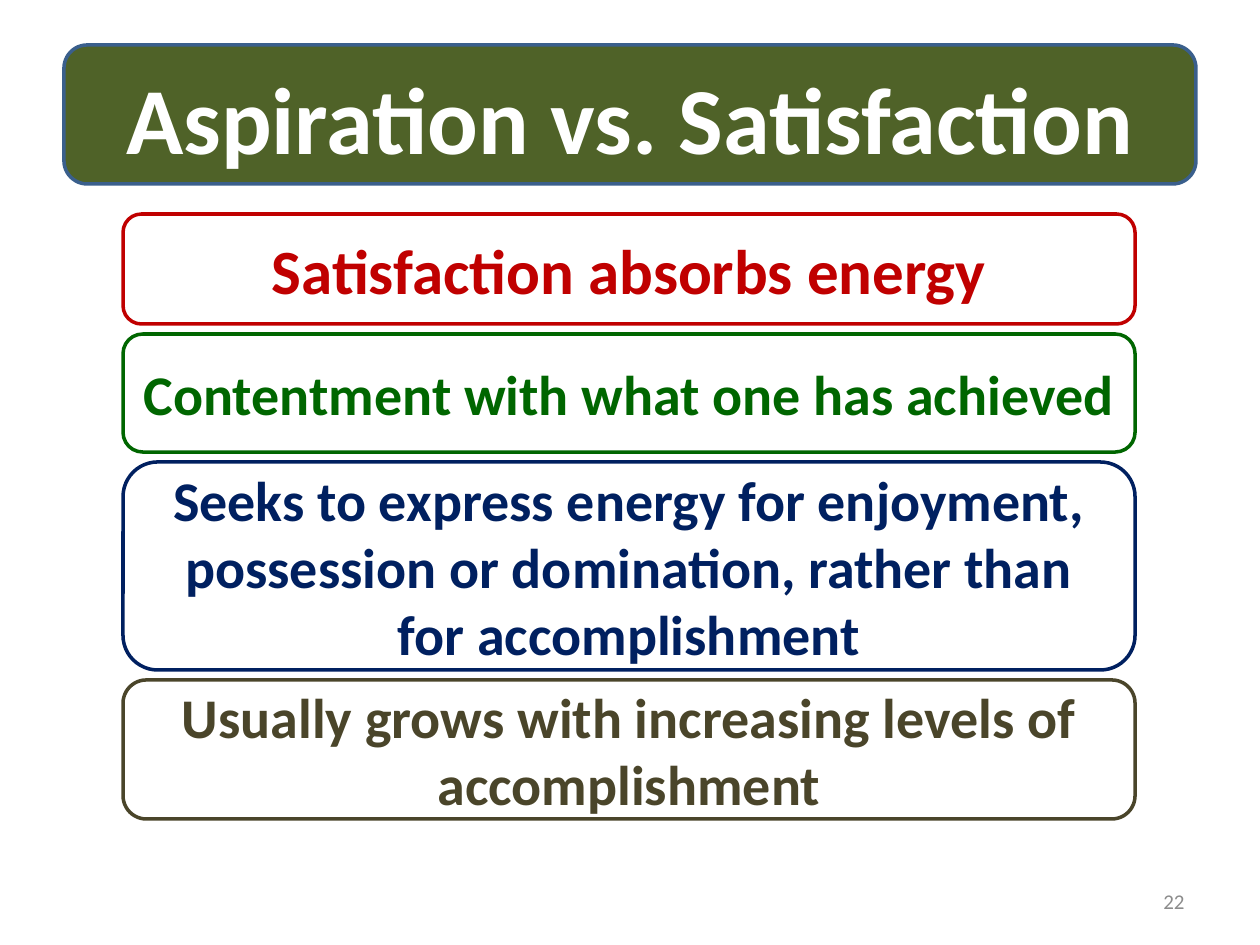
from dataclasses import dataclass

from pptx import Presentation
from pptx.dml.color import RGBColor
from pptx.enum.shapes import MSO_SHAPE
from pptx.enum.text import MSO_ANCHOR, PP_ALIGN
from pptx.util import Emu, Pt

ROUNDED = MSO_SHAPE.FLOWCHART_ALTERNATE_PROCESS
MIDDLE = MSO_ANCHOR.MIDDLE
CENTER = PP_ALIGN.CENTER
RIGHT = PP_ALIGN.RIGHT

PX_PER_INCH = 126
FONT = "Calibri"
COLORS = {
    "white": "FFFFFF",
    "olive": "4F6228",
    "steel": "3A5F8C",
    "red": "C00000",
    "green": "006600",
    "navy": "002060",
    "brown": "4A452A",
    "gray": "8C8C8C",
}
ROW_LEFT, ROW_TOP, ROW_WIDTH, ROW_GAP = 123, 214, 1012, 10


@dataclass(frozen=True)
class Area:
    left: int
    top: int
    width: int
    height: int


@dataclass(frozen=True)
class Statement:
    text: str
    height: int
    size: int
    color: str


STATEMENTS = [
    Statement("Satisfaction absorbs energy", 110, 36, "red"),
    Statement("Contentment with what one has achieved", 118, 32, "green"),
    Statement(
        "Seeks to express energy for enjoyment, possession or domination, "
        "rather than for accomplishment", 208, 32, "navy"),
    Statement("Usually grows with increasing levels of accomplishment", 139, 32, "brown"),
]


def px(length: int) -> Emu:
    return Emu(round(length * 914400 / PX_PER_INCH))


def place(area: Area) -> tuple:
    return px(area.left), px(area.top), px(area.width), px(area.height)


def rgb(name: str) -> RGBColor:
    return RGBColor.from_string(COLORS[name])


def write(box, text: str, size: int, color: str, align, bold: bool = True) -> None:
    frame = box.text_frame
    frame.word_wrap = True
    frame.vertical_anchor = MIDDLE
    para = frame.paragraphs[0]
    para.alignment = align
    span = para.add_run()
    span.text = text
    span.font.name = FONT
    span.font.size = Pt(size)
    span.font.bold = bold
    span.font.color.rgb = rgb(color)


def add_panel(page, area: Area, fill: str, line: str):
    panel = page.shapes.add_shape(ROUNDED, *place(area))
    panel.shadow.inherit = False
    panel.fill.solid()
    panel.fill.fore_color.rgb = rgb(fill)
    panel.line.color.rgb = rgb(line)
    panel.line.width = Pt(2)
    return panel


def add_statements(page, statements: list[Statement]) -> None:
    top = ROW_TOP
    for statement in statements:
        area = Area(ROW_LEFT, top, ROW_WIDTH, statement.height)
        panel = add_panel(page, area, "white", statement.color)
        write(panel, statement.text, statement.size, statement.color, CENTER)
        top += statement.height + ROW_GAP


def main() -> None:
    deck = Presentation()
    deck.slide_width, deck.slide_height = px(1260), px(945)
    page = deck.slides.add_slide(deck.slide_layouts[6])

    add_panel(page, Area(64, 45, 1132, 139), "olive", "steel")
    title = page.shapes.add_textbox(*place(Area(63, 38, 1134, 158)))
    write(title, "Aspiration vs. Satisfaction", 54, "white", CENTER)

    add_statements(page, STATEMENTS)

    number = page.shapes.add_textbox(*place(Area(903, 876, 294, 50)))
    write(number, "22", 12, "gray", RIGHT, bold=False)

    deck.save("out.pptx")


if __name__ == "__main__":
    main()
